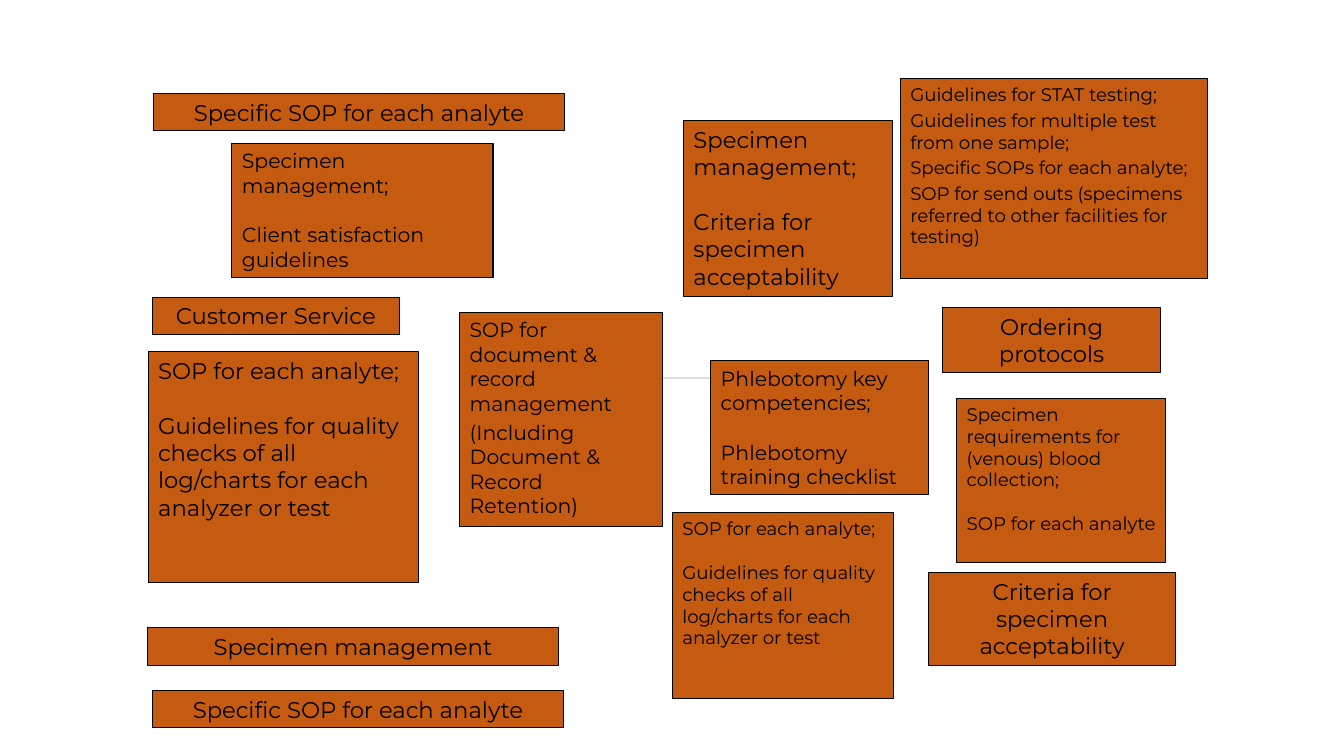
from dataclasses import dataclass

from lxml.etree import SubElement
from pptx import Presentation
from pptx.dml.color import RGBColor
from pptx.enum.shapes import MSO_CONNECTOR as Connector, MSO_SHAPE as Preset
from pptx.enum.text import MSO_ANCHOR as Anchor, MSO_AUTO_SIZE as AutoSize, PP_ALIGN as Align
from pptx.oxml.ns import qn
from pptx.util import Emu, Pt

EMU_PER_PX = 9144
LINE_GAP = 1.22
TIGHT_GAP = 0.2


@dataclass(frozen=True)
class Theme:
    """Colours, font and type sizes of the slide."""
    fill: RGBColor = RGBColor(0xC5, 0x5A, 0x11)
    ink: RGBColor = RGBColor(0, 0, 0)
    link: RGBColor = RGBColor(0xDD, 0xDD, 0xDD)
    background: RGBColor = RGBColor(0xFF, 0xFF, 0xFF)
    font: str = "Montserrat"
    large: float = 16.2
    medium: float = 14.6
    small: float = 13
    outline: float = 0.75


def px(length):
    """Turn px, 100 to the inch, into EMU."""
    return Emu(length * EMU_PER_PX)


def apply(target, values):
    """Set each format value on the target."""
    for name, value in values.items():
        setattr(target, name, value)


class Board:
    """Draws styled elements on the current slide."""

    def __init__(self, slide, theme):
        """Keep the slide and theme, and paint the background."""
        self.slide, self.theme = slide, theme
        slide.background.fill.solid()
        slide.background.fill.fore_color.rgb = theme.background

    def link(self, start, end):
        """Draw a thin straight line."""
        line = self.slide.shapes.add_connector(Connector.STRAIGHT, *map(px, start + end))
        line.line.color.rgb = self.theme.link
        line.line.width = Pt(self.theme.outline)
        SubElement(line._element.spPr, qn("a:effectLst"))

    def box(self, bounds, size, texts, align=Align.LEFT, gap=LINE_GAP):
        """Draw a filled rectangle with spaced paragraphs."""
        shape = self.slide.shapes.add_shape(Preset.RECTANGLE, *map(px, bounds))
        shape.shadow.inherit = False
        shape.fill.solid()
        shape.fill.fore_color.rgb = self.theme.fill
        shape.line.color.rgb = self.theme.ink
        shape.line.width = Pt(self.theme.outline)
        frame = shape.text_frame
        apply(frame, {"word_wrap": True, "auto_size": AutoSize.NONE,
                      "vertical_anchor": Anchor.TOP})
        for index, text in enumerate(texts):
            paragraph = frame.add_paragraph() if index else frame.paragraphs[0]
            apply(paragraph, {"alignment": align,
                              "space_before": Pt(size * gap if index else 0)})
            run = paragraph.add_run()
            run.text = text
            apply(run.font, {"name": self.theme.font, "size": Pt(size)})
            run.font.color.rgb = self.theme.ink

    def label(self, bounds, text):
        """Draw a box with one centred large text."""
        self.box(bounds, self.theme.large, [text], Align.CENTER)


def main():
    """Build the slide and save it."""
    presentation = Presentation()
    apply(presentation, {"slide_width": px(1333), "slide_height": px(750)})
    theme = Theme()
    board = Board(presentation.slides.add_slide(presentation.slide_layouts[6]), theme)

    analyte = "SOP for each analyte"
    specific = f"Specific {analyte}"
    specimen = "Specimen management"
    criteria = "Criteria for specimen acceptability"
    quality = [f"{analyte};",
               "Guidelines for quality checks of all log/charts for each analyzer or test"]

    board.link((456, 375), (892, 375))

    labels = [
        ((935, 305, 216, 65), "Ordering protocols"),
        ((151, 295, 245, 37), "Customer Service"),
        ((921, 568, 245, 92), criteria),
        ((146, 623, 408, 37), specimen),
        ((152, 93, 408, 37), specific),
        ((151, 685, 408, 37), specific),
    ]
    for bounds, text in labels:
        board.label(bounds, text)

    spaced_boxes = [
        ((949, 395, 207, 163), theme.small,
         ["Specimen requirements for (venous) blood collection;", analyte]),
        ((705, 358, 216, 133), theme.medium,
         ["Phlebotomy key competencies;", "Phlebotomy training checklist"]),
        ((678, 120, 207, 174), theme.large, [f"{specimen};", criteria]),
        ((147, 349, 268, 229), theme.large, quality),
        ((667, 508, 219, 185), theme.small, quality),
        ((230, 142, 259, 133), theme.medium,
         [f"{specimen};", "Client satisfaction guidelines"]),
    ]
    for bounds, size, texts in spaced_boxes:
        board.box(bounds, size, texts)

    tight_boxes = [
        ((893, 78, 305, 198), theme.small,
         ["Guidelines for STAT testing;",
          "Guidelines for multiple test from one sample;",
          "Specific SOPs for each analyte;",
          "SOP for send outs (specimens referred to other facilities for testing)"]),
        ((456, 310, 201, 212), theme.medium,
         ["SOP for document & record management",
          "(Including Document & Record Retention)"]),
    ]
    for bounds, size, texts in tight_boxes:
        board.box(bounds, size, texts, gap=TIGHT_GAP)

    presentation.save("out.pptx")


if __name__ == "__main__":
    main()
